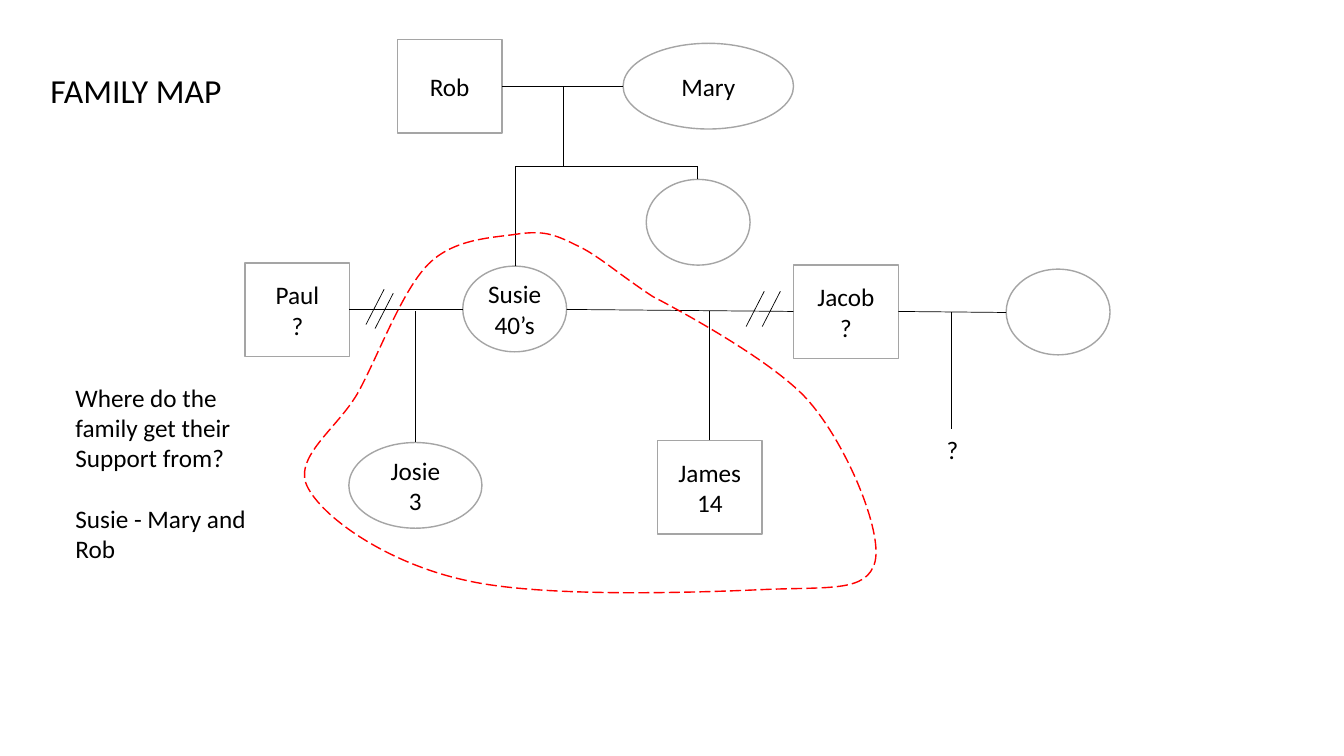
"""Build a one-slide family map with a dashed boundary around the household."""
from lxml import etree
from pptx import Presentation
from pptx.dml.color import RGBColor
from pptx.enum.dml import MSO_LINE
from pptx.enum.shapes import MSO_CONNECTOR, MSO_SHAPE
from pptx.enum.text import MSO_ANCHOR, MSO_AUTO_SIZE, PP_ALIGN
from pptx.oxml.ns import qn
from pptx.util import Pt

PX = 9144
BLACK = RGBColor(0x00, 0x00, 0x00)
WHITE = RGBColor(0xFF, 0xFF, 0xFF)
GREY = RGBColor(0xA5, 0xA5, 0xA5)
RED = RGBColor(0xFF, 0x00, 0x00)
OVAL, SQUARE = MSO_SHAPE.OVAL, MSO_SHAPE.RECTANGLE
STRAIGHT = MSO_CONNECTOR.STRAIGHT
LONG_DASH = MSO_LINE.LONG_DASH
LEFT, CENTER = PP_ALIGN.LEFT, PP_ALIGN.CENTER
TOP, MIDDLE = MSO_ANCHOR.TOP, MSO_ANCHOR.MIDDLE
NO_AUTOFIT, GROW = MSO_AUTO_SIZE.NONE, MSO_AUTO_SIZE.SHAPE_TO_FIT_TEXT


def write(frame, text, size=18, align=LEFT, anchor=TOP, wrap=True, fit=GROW):
    """Fill a text frame and format every run in it."""
    frame.text = text
    frame.auto_size = fit
    frame.word_wrap = wrap
    frame.vertical_anchor = anchor
    for paragraph in frame.paragraphs:
        paragraph.alignment = align
        for run in paragraph.runs:
            run.font.name = "Calibri"
            run.font.size = Pt(size)
            run.font.color.rgb = BLACK


prs = Presentation()
prs.slide_width, prs.slide_height = 1333 * PX, 750 * PX
slide = prs.slides.add_slide(prs.slide_layouts[5])
shapes = slide.shapes

title = shapes.title
title.left, title.top, title.width, title.height = 40 * PX, 64 * PX, 191 * PX, 50 * PX
write(title.text_frame, "FAMILY MAP", size=24, wrap=False)

people = [
    (OVAL, 641, 178, 103, 85, ""),
    (OVAL, 998, 267, 103, 85, ""),
    (OVAL, 346, 439, 132, 85, "Josie\n3"),
    (OVAL, 618, 43, 169, 85, "Mary"),
    (OVAL, 459, 264, 103, 85, "Susie\n40’s"),
    (SQUARE, 243, 261, 104, 93, "Paul\n?"),
    (SQUARE, 652, 437, 104, 93, "James\n14"),
    (SQUARE, 787, 263, 104, 93, "Jacob\n?"),
    (SQUARE, 394, 39, 104, 93, "Rob"),
]
for kind, x, y, width, height, label in people:
    person = shapes.add_shape(kind, x * PX, y * PX, width * PX, height * PX)
    person.shadow.inherit = False
    person.fill.solid()
    person.fill.fore_color.rgb = WHITE
    person.line.color.rgb = GREY
    person.line.width = Pt(1)
    if label:
        write(person.text_frame, label, align=CENTER, anchor=MIDDLE, wrap=False, fit=NO_AUTOFIT)

family_ties = [
    (498, 86, 618, 86),
    (559, 86, 559, 165),
    (511, 165, 692, 165),
    (511, 264, 511, 165),
    (692, 178, 692, 165),
    (459, 307, 346, 307),
    (562, 307, 787, 309),
    (891, 309, 998, 310),
    (412, 439, 412, 309),
    (704, 437, 704, 309),
    (944, 310, 944, 426),
]
separation_marks = [
    (x, y, x - 18, y + 35) for x, y in [(381, 287), (390, 291), (758, 289), (774, 289)]
]
for ends in family_ties:
    assert len(ends) == 4
for ends in family_ties + separation_marks:
    tie = shapes.add_connector(STRAIGHT, *(end * PX for end in ends))
    tie.line.color.rgb = BLACK
    tie.line.width = Pt(0.5)
    etree.SubElement(tie._element.spPr, qn("a:effectLst"))

unknown_child = shapes.add_textbox(929 * PX, 426 * PX, 57 * PX, 40 * PX)
write(unknown_child.text_frame, "?")

household_left, household_top, household_right, household_bottom = 302, 231, 869, 588
household_start = (515, 232)
household_curves = [
    ((490, 236), (451, 236), (425, 262)),
    ((399, 288), (376, 351), (356, 388)),
    ((336, 425), (288, 454), (306, 485)),
    ((324, 517), (388, 560), (463, 576)),
    ((538, 593), (688, 588), (756, 585)),
    ((823, 582), (860, 588), (868, 557)),
    ((875, 526), (840, 442), (803, 399)),
    ((766, 355), (647, 294), (647, 294)),
    ((608, 268), (593, 253), (571, 243)),
    ((549, 232), (539, 229), household_start),
]
builder = shapes.build_freeform(household_left, household_top, scale=PX)
builder.add_line_segments([(household_right, household_bottom)], close=True)
household = builder.convert_to_shape()
household.shadow.inherit = False
household.fill.background()
household.line.color.rgb = RED
household.line.width = Pt(1)
household.line.dash_style = LONG_DASH

outline = household._element.find(".//" + qn("a:pathLst"))[0]
for step in list(outline):
    outline.remove(step)
steps = [("a:moveTo", [household_start])]
steps += [("a:cubicBezTo", curve) for curve in household_curves]
steps += [("a:close", [])]
for tag, points in steps:
    step = etree.SubElement(outline, qn(tag))
    for x, y in points:
        etree.SubElement(
            step, qn("a:pt"), x=str(x - household_left), y=str(y - household_top)
        )

support_note = shapes.add_textbox(65 * PX, 374 * PX, 204 * PX, 192 * PX)
write(
    support_note.text_frame,
    "Where do the family get their Support from?\nSusie - Mary and Rob",
)
support_note.text_frame.paragraphs[1].space_before = Pt(22)

prs.save("out.pptx")
